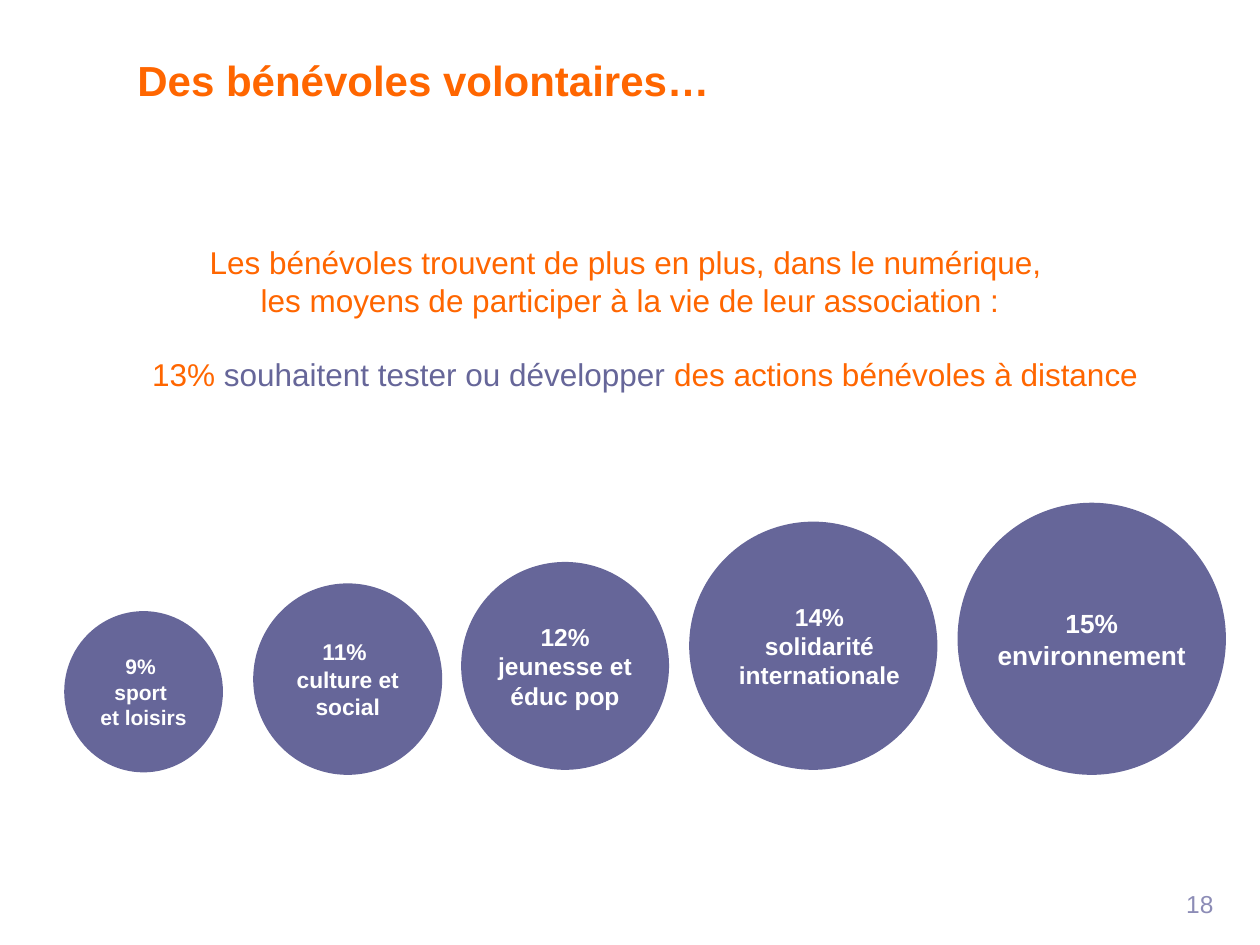
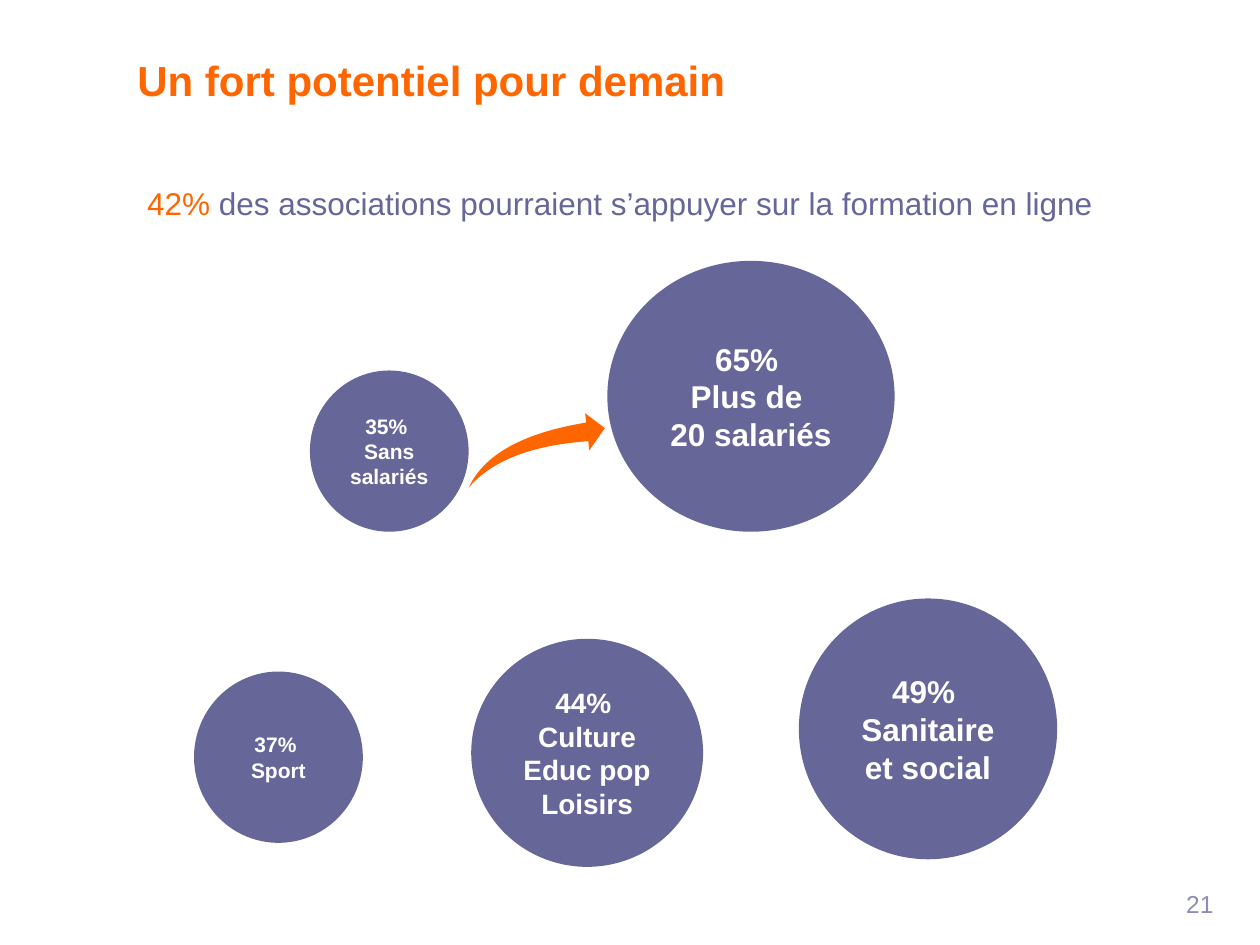
"""Build two slides on volunteering and online training in associations."""
from dataclasses import dataclass

from pptx import Presentation
from pptx import util as u
from pptx.dml.color import RGBColor
from pptx.enum import shapes, text

ORANGE = RGBColor(0xFF, 0x66, 0x00)
VIOLET = RGBColor(0x66, 0x66, 0x99)
LILAC = RGBColor(0x8C, 0x8C, 0xB6)
WHITE = RGBColor(0xFF, 0xFF, 0xFF)
FONT = "Arial"
TITLE_ONLY = 5


@dataclass(frozen=True)
class Box:
    """Position and size in inches."""
    left: float
    top: float
    width: float
    height: float

    def lengths(self) -> list[u.Length]:
        return [u.Inches(n) for n in (self.left, self.top, self.width, self.height)]


@dataclass(frozen=True)
class Bubble:
    """A circle with a percentage and its label."""
    box: Box
    size: int
    lines: tuple[str, ...]
    inset_left: float = 0.1
    inset_right: float = 0.1


@dataclass(frozen=True)
class LeadLine:
    """A centred line made of coloured spans."""
    spans: tuple[tuple[str, RGBColor], ...]
    space_before: float = 0
    indent: float = 0


TITLE_BOX = Box(0.99, 0.01, 9, 1.25)
NUMBER_BOX = Box(7.4, 6.97, 2.33, 0.4)

SECTOR_BUBBLES = (
    Bubble(Box(0.51, 4.85, 1.26, 1.28), 12, ("9% ", "sport ", "et loisirs")),
    Bubble(Box(2.01, 4.63, 1.5, 1.52), 13, ("11% ", "culture et social")),
    Bubble(Box(3.66, 4.46, 1.65, 1.65), 14, ("12% jeunesse et éduc pop",), 0, 0),
    Bubble(Box(5.47, 4.14, 1.97, 1.97), 14, ("14% solidarité", "internationale"), 0.1, 0),
    Bubble(Box(7.6, 3.99, 2.13, 2.16), 15, ("15% environnement",), 0, 0),
)
TRAINING_BUBBLES = (
    Bubble(Box(2.46, 2.94, 1.26, 1.28), 12, ("35% ", "Sans salariés")),
    Bubble(Box(4.82, 2.07, 2.28, 2.15), 18, ("65% ", "Plus de ", "20 salariés")),
    Bubble(Box(1.54, 5.33, 1.34, 1.36), 12, ("37% ", "Sport")),
    Bubble(Box(3.74, 5.07, 1.84, 1.81), 16, ("44% ", "Culture", "Educ pop", "Loisirs")),
    Bubble(Box(6.34, 4.75, 2.05, 2.07), 18, ("49% ", "Sanitaire et social")),
)
REMOTE_LEAD = (
    LeadLine((("Les bénévoles trouvent de plus en plus, dans le numérique, ", ORANGE),)),
    LeadLine((("les moyens de participer à la vie de leur association :", ORANGE),)),
    LeadLine((("13%", ORANGE), (" souhaitent tester ou développer ", VIOLET),
              ("des actions bénévoles à distance ", ORANGE)), 21, 0.31),
)
TRAINING_LEAD = (
    LeadLine((("42% ", ORANGE),
              ("des associations pourraient s’appuyer sur la formation en ligne", VIOLET))),
)


def style(para, size: float, color: RGBColor, align, bold: bool = False) -> None:
    para.alignment = align
    para.font.name = FONT
    para.font.size = u.Pt(size)
    para.font.bold = bold
    para.font.color.rgb = color


def next_para(frame, index: int):
    return frame.paragraphs[0] if index == 0 else frame.add_paragraph()


def add_figure(page, kind, box: Box, fill: RGBColor | None = None):
    figure = page.shapes.add_shape(kind, *box.lengths())
    figure.shadow.inherit = False
    figure.line.fill.background()
    if fill is None:
        figure.fill.background()
    else:
        figure.fill.solid()
        figure.fill.fore_color.rgb = fill
    return figure


def add_page(deck, title: str, number: int):
    page = deck.slides.add_slide(deck.slide_layouts[TITLE_ONLY])
    heading = page.shapes.title
    heading.left, heading.top, heading.width, heading.height = TITLE_BOX.lengths()
    footer = page.shapes.add_textbox(*NUMBER_BOX.lengths())
    for holder, words in ((heading, title), (footer, str(number))):
        frame = holder.text_frame
        frame.text = words
        frame.word_wrap = True
        frame.auto_size = text.MSO_AUTO_SIZE.NONE
        frame.vertical_anchor = text.MSO_ANCHOR.MIDDLE
    style(heading.text_frame.paragraphs[0], 24, ORANGE, text.PP_ALIGN.LEFT, True)
    style(footer.text_frame.paragraphs[0], 14, LILAC, text.PP_ALIGN.RIGHT)
    return page


def add_lead(page, box: Box, lines: tuple[LeadLine, ...]) -> None:
    frame = add_figure(page, shapes.MSO_SHAPE.ROUNDED_RECTANGLE, box).text_frame
    frame.word_wrap = True
    frame.vertical_anchor = text.MSO_ANCHOR.TOP
    for index, line in enumerate(lines):
        para = next_para(frame, index)
        if line.indent:
            para._p.get_or_add_pPr().set("marL", str(u.Inches(line.indent)))
        if line.space_before:
            para.space_before = u.Pt(line.space_before)
        style(para, 18, ORANGE, text.PP_ALIGN.CENTER)
        for words, color in line.spans:
            span = para.add_run()
            span.text = words
            span.font.color.rgb = color


def add_bubble(page, bubble: Bubble) -> None:
    frame = add_figure(page, shapes.MSO_SHAPE.OVAL, bubble.box, VIOLET).text_frame
    frame.word_wrap = True
    frame.vertical_anchor = text.MSO_ANCHOR.MIDDLE
    frame.margin_left = u.Inches(bubble.inset_left)
    frame.margin_right = u.Inches(bubble.inset_right)
    for index, line in enumerate(bubble.lines):
        para = next_para(frame, index)
        para.text = line
        style(para, bubble.size, WHITE, text.PP_ALIGN.CENTER, True)


def main() -> None:
    deck = Presentation()
    deck.slide_width, deck.slide_height = u.Inches(10), u.Inches(7.5)

    page = add_page(deck, "Des bénévoles volontaires…", 18)
    add_lead(page, Box(0.51, 1.81, 8.98, 1.45), REMOTE_LEAD)
    for bubble in SECTOR_BUBBLES:
        add_bubble(page, bubble)

    page = add_page(deck, "Un fort potentiel pour demain", 21)
    add_lead(page, Box(0.43, 1.39, 8.98, 0.45), TRAINING_LEAD)
    for bubble in TRAINING_BUBBLES:
        add_bubble(page, bubble)
    arrow = add_figure(page, shapes.MSO_SHAPE.SWOOSH_ARROW, Box(3.72, 3.28, 1.08, 0.59), ORANGE)
    arrow.adjustments[0] = arrow.adjustments[1] = 0.25

    deck.save("out.pptx")


if __name__ == "__main__":
    main()
